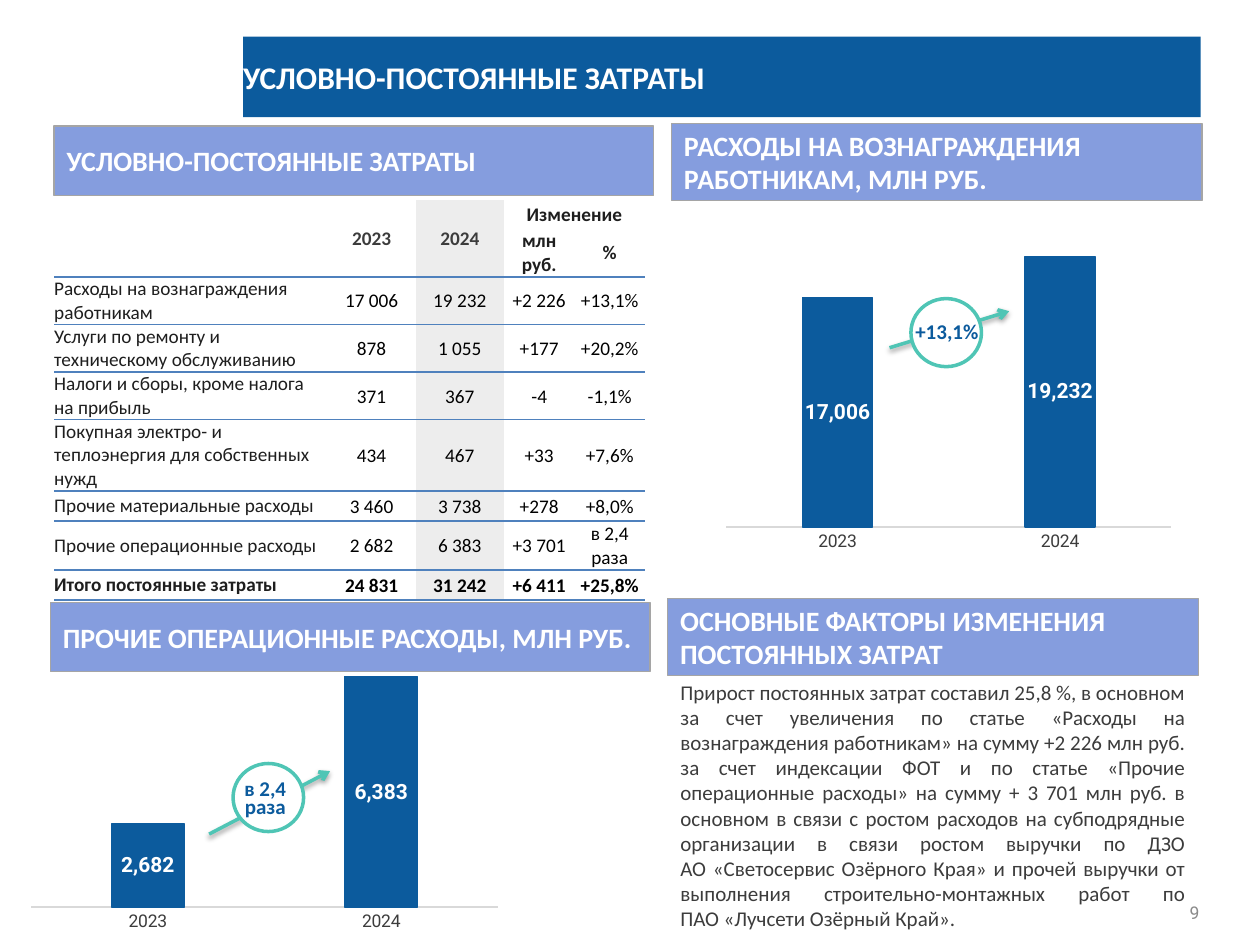
"""Build the slide on semi-fixed costs with a table, two charts and a commentary."""
from lxml.etree import SubElement
from pptx import Presentation
from pptx.chart.data import CategoryChartData
from pptx.dml.color import RGBColor
from pptx.enum.chart import XL_CHART_TYPE as ChartType, XL_LABEL_POSITION as LabelPosition, XL_TICK_MARK as Tick
from pptx.enum.shapes import MSO_CONNECTOR as Connector, MSO_SHAPE as Shape
from pptx.enum.text import MSO_ANCHOR as Anchor, MSO_AUTO_SIZE as AutoSize, PP_ALIGN as Align
from pptx.oxml import parse_xml
from pptx.oxml.ns import nsdecls, qn
from pptx.util import Inches, Pt

NAVY, LILAC, TEAL, GREY, WHITE = "0C5B9D", "859DDE", "4FC5B5", "3C3C3C", "FFFFFF"
INK, BLACK, SHADE, RULE = "1E1E1E", "000000", "EDEDED", "4F81BD"
COST_ROWS = [
    ("", "2023", "2024", "Изменение", ""),
    ("", "", "", "млн руб.", "%"),
    ("Расходы на вознаграждения работникам", "17 006", "19 232", "+2 226", "+13,1%"),
    ("Услуги по ремонту и техническому обслуживанию", "878", "1 055", "+177", "+20,2%"),
    ("Налоги и сборы, кроме налога на прибыль", "371", "367", "-4", "-1,1%"),
    ("Покупная электро- и теплоэнергия для собственных нужд", "434", "467", "+33", "+7,6%"),
    ("Прочие материальные расходы", "3 460", "3 738", "+278", "+8,0%"),
    ("Прочие операционные расходы", "2 682", "6 383", "+3 701", "в 2,4 раза"),
    ("Итого постоянные затраты", "24 831", "31 242", "+6 411", "+25,8%"),
]
FACTORS = (
    "Прирост постоянных затрат составил 25,8 %, в основном за счет увеличения по статье "
    "«Расходы на вознаграждения работникам» на сумму +2 226 млн руб. за счет индексации ФОТ "
    "и по статье «Прочие операционные расходы» на сумму + 3 701 млн руб. в основном в связи "
    "с ростом расходов на субподрядные организации в связи ростом выручки по ДЗО\v"
    "АО «Светосервис Озёрного Края» и прочей выручки от выполнения "
    "строительно-монтажных работ по\vПАО «Лучсети Озёрный Край»."
)


def color(value):
    """Turn a hex string into a colour."""
    return RGBColor.from_string(value)


class SlideBuilder:
    """Hold the style and the current slide, measured on 100 columns by 75 rows."""

    def __init__(self, deck):
        """Add a title-and-content slide to the deck."""
        self.column, self.row = deck.slide_width / 100, deck.slide_height / 75
        self.slide = deck.slides.add_slide(deck.slide_layouts[1])
        self.shapes = self.slide.shapes

    def place(self, left, top, width, height):
        """Convert grid units to slide lengths."""
        return [round(left * self.column), round(top * self.row),
                round(width * self.column), round(height * self.row)]

    def move(self, shape, area):
        """Move a placeholder to an area of the grid."""
        shape.left, shape.top, shape.width, shape.height = self.place(*area)

    def fill_frame(self, frame, text, size, ink, bold=False, align=Align.LEFT, font="Calibri",
                   anchor=Anchor.MIDDLE, insets=(0.1, 0.05), spacing=1.0):
        """Set and format the single paragraph of a text frame."""
        frame.text = text
        frame.word_wrap, frame.auto_size, frame.vertical_anchor = True, AutoSize.NONE, anchor
        frame.margin_left = frame.margin_right = Inches(insets[0])
        frame.margin_top = frame.margin_bottom = Inches(insets[1])
        self.style_para(frame.paragraphs[0], size, ink, bold, align, font, spacing)

    def style_para(self, para, size, ink, bold, align, font="Calibri", spacing=1.0):
        """Format a paragraph and its runs."""
        para.alignment, para.line_spacing, para.space_before = align, spacing, Pt(0)
        for span in para.runs:
            span.font.name, span.font.size, span.font.bold = font, Pt(size), bold
            span.font.color.rgb = color(ink)

    def title(self, text, area):
        """Fill the title placeholder as a coloured band."""
        box = self.shapes.title
        self.move(box, area)
        box.fill.solid()
        box.fill.fore_color.rgb = color(NAVY)
        self.fill_frame(box.text_frame, text, 18, WHITE, True, insets=(0, 0))

    def body(self, text, area):
        """Fill the body placeholder with justified text without a bullet."""
        box = self.slide.placeholders[1]
        self.move(box, area)
        frame = box.text_frame
        frame.text = text
        properties = frame.paragraphs[0]._p.get_or_add_pPr()
        properties.set("marL", "0")
        properties.set("indent", "0")
        SubElement(properties, qn("a:buNone"))
        frame.auto_size, frame.vertical_anchor = AutoSize.NONE, Anchor.TOP
        self.style_para(frame.paragraphs[0], 12, GREY, False, Align.JUSTIFY)

    def heading(self, text, area):
        """Add a section heading band."""
        box = self.shapes.add_shape(Shape.RECTANGLE, *self.place(*area))
        box.shadow.inherit = False
        box.fill.solid()
        box.fill.fore_color.rgb = color(LILAC)
        box.line.color.rgb, box.line.width = color("A5A5A5"), Pt(0.75)
        self.fill_frame(box.text_frame, text, 16, WHITE, True)

    def label(self, text, area, size, ink, parent=None, **style):
        """Add a text box."""
        box = (parent or self.shapes).add_textbox(*self.place(*area))
        self.fill_frame(box.text_frame, text, size, ink, **style)

    def growth(self, text, start, end, circle, label_area):
        """Add a growth callout: a shadowed arrow, a circle and its label."""
        parts = self.shapes.add_group_shape().shapes
        arrow = parts.add_connector(Connector.STRAIGHT, *self.place(*start, *end))
        arrow.line.color.rgb, arrow.line.width = color(TEAL), Pt(2)
        SubElement(arrow.line._get_or_add_ln(), qn("a:tailEnd"), type="arrow")
        arrow._element.spPr.append(parse_xml(
            f'<a:effectLst {nsdecls("a")}><a:outerShdw blurRad="39370" dist="20320" dir="5400000">'
            f'<a:srgbClr val="{BLACK}"><a:alpha val="38000"/></a:srgbClr></a:outerShdw></a:effectLst>'))
        ring = parts.add_shape(Shape.OVAL, *self.place(*circle, 5.6, 5.4))
        ring.shadow.inherit = False
        ring.fill.solid()
        ring.fill.fore_color.rgb = color(WHITE)
        ring.line.color.rgb, ring.line.width = color(TEAL), Pt(2)
        self.label(text, label_area, 12, NAVY, parts, bold=True, align=Align.CENTER,
                   anchor=Anchor.TOP, insets=(0.05, 0.05), spacing=0.7)

    def chart(self, values, area, low, high, plot):
        """Add a column chart comparing two years, with the plot area given in shares."""
        data = CategoryChartData(number_format="#,##0")
        data.categories = ["2023", "2024"]
        data.add_series("Series 1", values)
        chart = self.shapes.add_chart(ChartType.COLUMN_CLUSTERED, *self.place(*area), data).chart
        chart.has_legend = chart.has_title = False
        chart.font.name, chart.font.size = "Roboto", Pt(10)
        chart.font.color.rgb = color(GREY)
        scale, years = chart.value_axis, chart.category_axis
        scale.visible = scale.has_major_gridlines = False
        scale.minimum_scale, scale.maximum_scale = low, high
        years.major_tick_mark = years.minor_tick_mark = Tick.NONE
        years.format.line.color.rgb, years.format.line.width = color("D9D9D9"), Pt(0.75)
        columns = chart.plots[0]
        columns.gap_width, columns.vary_by_categories = 219, False
        style = columns.series[0].format
        style.fill.solid()
        style.fill.fore_color.rgb = style.line.color.rgb = color(NAVY)
        style.line.width = Pt(0.75)
        labels = columns.series[0].data_labels
        labels.show_value, labels.position = True, LabelPosition.CENTER
        labels.number_format, labels.number_format_is_linked = "#,##0", False
        labels.font.name, labels.font.size, labels.font.bold = "Roboto", Pt(12), True
        labels.font.color.rgb = color(WHITE)
        plot_area = chart._chartSpace.chart.plotArea
        for old in plot_area.findall(qn("c:layout")):
            plot_area.remove(old)
        sizes = "".join(f'<c:{key} val="{share}"/>' for key, share in zip("xywh", plot))
        plot_area.insert(0, parse_xml(
            f'<c:layout {nsdecls("c")}><c:manualLayout><c:layoutTarget val="inner"/>'
            f'<c:xMode val="edge"/><c:yMode val="edge"/>{sizes}</c:manualLayout></c:layout>'))

    def table(self, rows, area, widths, heights):
        """Add the cost table with a two-row header and ruled body rows."""
        table = self.shapes.add_table(len(rows), len(widths), *self.place(*area)).table
        table.first_row = table.horz_banding = False
        table._tbl.tblPr.find(qn("a:tableStyleId")).text = "{2D5ABB26-0587-4C30-8999-92F81FD0307C}"
        for column, width in zip(table.columns, widths):
            column.width = round(width * self.column)
        for line, height in zip(table.rows, heights):
            line.height = round(height * self.row)
        for index in range(3):
            table.cell(0, index).merge(table.cell(1, index))
        table.cell(0, 3).merge(table.cell(0, 4))
        for y, texts in enumerate(rows):
            for x, text in enumerate(texts):
                self.cell(table.cell(y, x), text, x, y, y in (0, 1, len(rows) - 1))

    def cell(self, cell, text, x, y, bold):
        """Fill and style one table cell."""
        header = y < 2
        if not cell.is_spanned:
            cell.text = text
        ink = (GREY if x < 3 else INK) if header else (BLACK if x else INK)
        self.style_para(cell.text_frame.paragraphs[0], 11, ink, bold, Align.CENTER if x else Align.LEFT)
        cell.vertical_anchor = Anchor.MIDDLE
        inset = Inches(0 if header or x == 0 else 0.01)
        cell.margin_left = cell.margin_right = cell.margin_top = inset
        cell.margin_bottom = 0
        properties = cell._tc.get_or_add_tcPr()
        for side in () if header else ("lnT", "lnB"):
            properties.append(parse_xml(
                f'<a:{side} {nsdecls("a")} w="12700"><a:solidFill><a:srgbClr val="{RULE}"/>'
                f'</a:solidFill></a:{side}>'))
        cell.fill.solid()
        cell.fill.fore_color.rgb = color(SHADE if x == 2 else WHITE)


def main():
    """Build and save the deck."""
    deck = Presentation()
    deck.slide_width, deck.slide_height = Inches(10), Inches(7.5)
    page = SlideBuilder(deck)
    page.title("УСЛОВНО-ПОСТОЯННЫЕ ЗАТРАТЫ", (19.3, 2.9, 76, 6.4))
    page.body(FACTORS, (53, 53.4, 42.1, 21.2))
    page.chart((17006, 19232), (56.9, 17.9, 36.8, 26.6), 4500, 20000, (0.02, 0.05, 0.96, 0.85))
    page.chart((2682, 6383), (1.7, 49.5, 38.6, 25), 600, 7000, (0.02, 0.09, 0.96, 0.81))
    page.growth("+13,1%", (70.6, 27.6), (80.1, 24.7), (72.3, 23.7), (71.6, 25.3, 7.1, 2.5))
    page.growth("в 2,4 раза", (16.6, 66.2), (26.2, 61.2), (18.5, 60.6), (17.5, 61.6, 7.1, 3.9))
    page.table(COST_ROWS, (4.3, 15.9, 46.9, 24.3), (21.7, 7, 7, 5.6, 5.6),
               (2.3, 2.4, 3.4, 2.4, 3.2, 2.4, 2.4, 2.4, 2.4))
    page.heading("УСЛОВНО-ПОСТОЯННЫЕ ЗАТРАТЫ", (4.3, 10, 47.6, 5.5))
    page.heading("РАСХОДЫ НА ВОЗНАГРАЖДЕНИЯ РАБОТНИКАМ, МЛН РУБ.", (53.3, 9.8, 42.1, 6.1))
    page.heading("ПРОЧИЕ ОПЕРАЦИОННЫЕ РАСХОДЫ, МЛН РУБ.", (4, 47.8, 47.6, 5.5))
    page.heading("ОСНОВНЫЕ ФАКТОРЫ ИЗМЕНЕНИЯ ПОСТОЯННЫХ ЗАТРАТ", (53, 47.5, 42.1, 6.1))
    page.label("9", (90.9, 71.5, 4.3, 1.8), 10, "8A8A8A", align=Align.RIGHT, font="Roboto", insets=(0, 0))
    deck.save("out.pptx")


if __name__ == "__main__":
    main()
